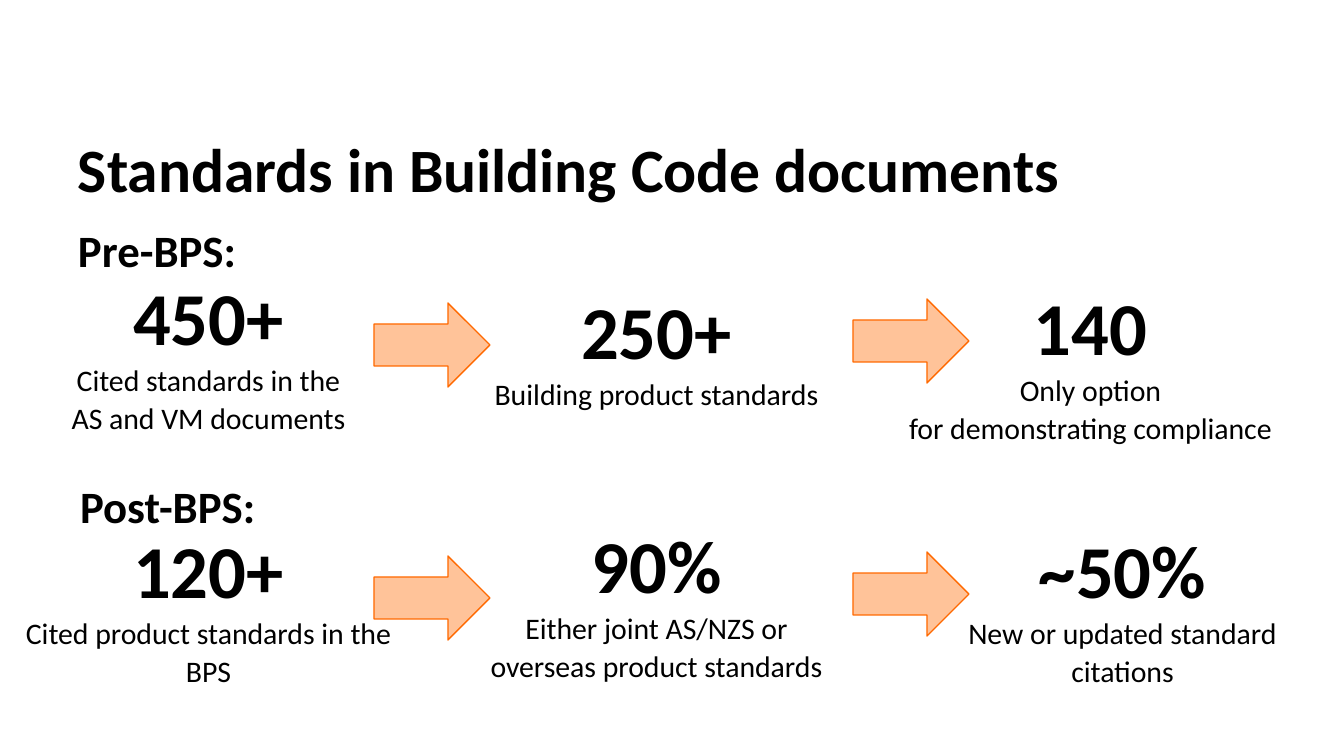
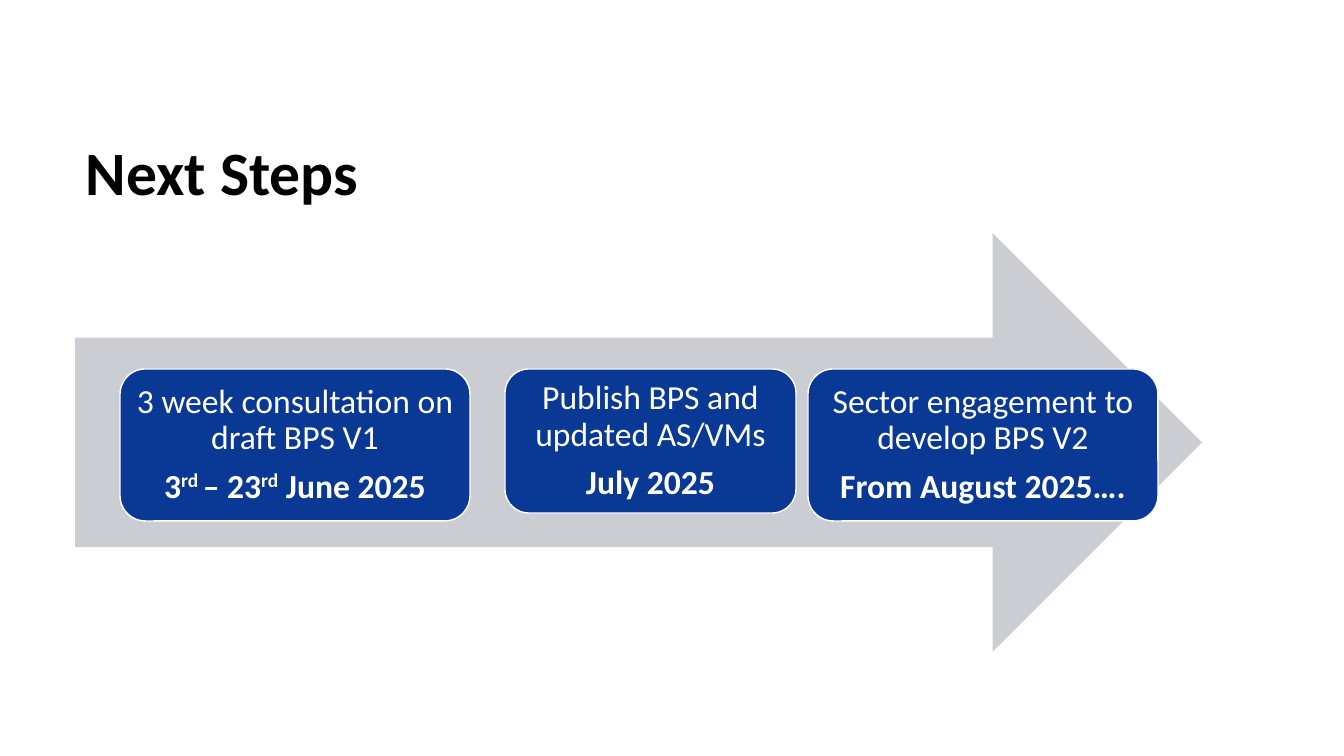
from pptx import Presentation
from pptx.dml.color import RGBColor
from pptx.enum.shapes import MSO_SHAPE
from pptx.enum.text import MSO_ANCHOR, PP_ALIGN
from pptx.util import Emu, Pt

ARROW, CARD = MSO_SHAPE.RIGHT_ARROW, MSO_SHAPE.ROUNDED_RECTANGLE
CENTER, MIDDLE = PP_ALIGN.CENTER, MSO_ANCHOR.MIDDLE

FONT = "Calibri"
BLACK, WHITE = "000000", "FFFFFF"
PEACH, ORANGE = "FFC399", "FF6900"
NAVY, GREY = "093895", "CCCDD2"

# Section: heading, its left and top, top of the figures,
# then figures as (left, offset from top, number, caption lines)
SECTIONS = [
    ("Pre-BPS:", 68, 218, 289, [
        (12, 0, "450+", ["Cited standards in the", "AS and VM documents"]),
        (460, -5, "250+", ["Building product standards"]),
        (894, 10, "140", ["Only option", "for demonstrating compliance"]),
    ]),
    ("Post-BPS:", 70, 474, 542, [
        (12, 0, "120+", ["Cited product standards in the BPS"]),
        (460, -5, "90%", ["Either joint AS/NZS or overseas product standards"]),
        (926, 0, "~50%", ["New or updated standard citations"]),
    ]),
]
SECTION_ARROWS = [(374, 14), (853, 10)]  # left, offset from top of the figures

# Step: left, width, height, task, date as (text, superscript)
STEPS = [
    (120, 350, 152, "3 week consultation on draft BPS V1",
     [("3", False), ("rd ", True), ("– 23", False), ("rd", True), (" June 2025", False)]),
    (505, 291, 144, "Publish BPS and updated AS/VMs", [("July 2025", False)]),
    (808, 350, 152, "Sector engagement to develop BPS V2", [("From August 2025….", False)]),
]
STEPS_TOP = 369


def px(n):
    return Emu(round(n * 914400 / 100.8))


def rgb(color):
    return RGBColor.from_string(color)


def set_frame(sp, inset_x=10, inset_y=5, anchor=MSO_ANCHOR.TOP):
    tf = sp.text_frame
    tf.word_wrap = True
    tf.vertical_anchor = anchor
    tf.margin_left = tf.margin_right = px(inset_x)
    tf.margin_top = tf.margin_bottom = px(inset_y)
    return tf


def add_text(slide, x, y, w, h, **frame):
    return set_frame(slide.shapes.add_textbox(px(x), px(y), px(w), px(h)), **frame)


def add_shape(slide, kind, x, y, w, h, fill, line=None):
    sp = slide.shapes.add_shape(kind, px(x), px(y), px(w), px(h))
    sp.shadow.inherit = False
    sp.fill.solid()
    sp.fill.fore_color.rgb = rgb(fill)
    if line:
        sp.line.color.rgb = rgb(line)
        sp.line.width = Pt(1)
    else:
        sp.line.fill.background()
    return sp


def add_run(p, text, size, color=BLACK, bold=False, superscript=False):
    r = p.add_run()
    r.text = text
    r.font.name = FONT
    r.font.size = Pt(size)
    r.font.bold = bold
    r.font.color.rgb = rgb(color)
    if superscript:
        r.font._element.set("baseline", "30000")


def add_title(slide, x, y, text):
    p = add_text(slide, x, y, 1210, 86).paragraphs[0]
    p.line_spacing = 0.9
    add_run(p, text, 44, bold=True)


def add_figure(slide, x, y, number, caption):
    tf = add_text(slide, x, y, 393, 180, inset_x=13, inset_y=7, anchor=MIDDLE)
    number_p, caption_p = tf.paragraphs[0], tf.add_paragraph()
    for p in (number_p, caption_p):
        p.alignment = CENTER
        p.line_spacing = Pt(26.7)
    add_run(number_p, number, 53.3, bold=True)
    for i, text in enumerate(caption):
        if i:
            caption_p.add_line_break()
        add_run(caption_p, text, 21.3)


def add_step(slide, x, w, h, task, date):
    sp = add_shape(slide, CARD, x, STEPS_TOP, w, h, NAVY, WHITE)
    tf = set_frame(sp, inset_x=9, inset_y=9, anchor=MIDDLE)
    task_p, date_p = tf.paragraphs[0], tf.add_paragraph()
    for p in (task_p, date_p):
        p.alignment = CENTER
        p.line_spacing = 0.9
    date_p.space_before = Pt(8.4)
    add_run(task_p, task, 24, WHITE)
    for text, superscript in date:
        add_run(date_p, text, 24, WHITE, True, superscript)


def build_standards(slide):
    add_title(slide, 68, 134, "Standards in Building Code documents")
    for heading, x, y, top, figures in SECTIONS:
        add_run(add_text(slide, x, y, 560, 65).paragraphs[0], heading, 32, bold=True)
        for left, offset in SECTION_ARROWS:
            add_shape(slide, ARROW, left, top + offset, 116, 84, PEACH, ORANGE)
        for left, offset, number, caption in figures:
            add_figure(slide, left, top + offset, number, caption)


def build_next_steps(slide):
    add_title(slide, 76, 137, "Next Steps")
    add_shape(slide, ARROW, 75, 233, 1127, 419, GREY)
    for step in STEPS:
        add_step(slide, *step)


def main():
    prs = Presentation()
    prs.slide_width, prs.slide_height = px(1344), px(756)
    for build in (build_standards, build_next_steps):
        build(prs.slides.add_slide(prs.slide_layouts[6]))
    prs.save("out.pptx")


if __name__ == "__main__":
    main()
